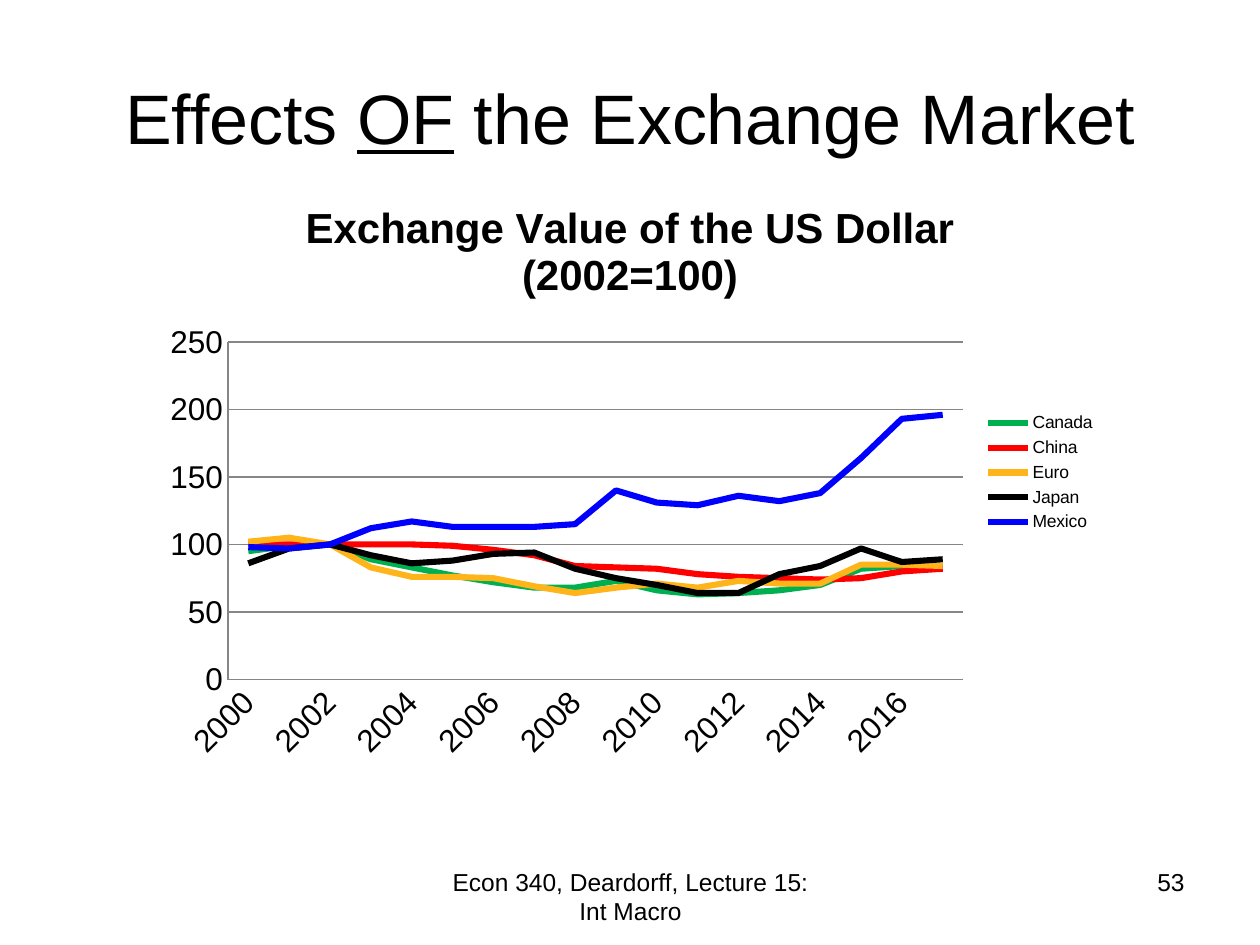
from pptx import Presentation
from pptx.chart.data import CategoryChartData
from pptx.dml.color import RGBColor
from pptx.enum.chart import XL_CHART_TYPE, XL_LEGEND_POSITION, XL_MARKER_STYLE, XL_TICK_MARK
from pptx.enum.text import MSO_ANCHOR, PP_ALIGN
from pptx.util import Inches, Pt

LINE_CHART = XL_CHART_TYPE.LINE
LEGEND_RIGHT = XL_LEGEND_POSITION.RIGHT
NO_MARKER = XL_MARKER_STYLE.NONE
NO_TICK = XL_TICK_MARK.NONE
MIDDLE = MSO_ANCHOR.MIDDLE
CENTER, RIGHT = PP_ALIGN.CENTER, PP_ALIGN.RIGHT

FONT = "Arial"
COLORS = {
    "text": "000000",
    "grid": "868686",
    "Canada": "00B050",
    "China": "FF0000",
    "Euro": "FFB51A",
    "Japan": "000000",
    "Mexico": "0000FF",
}
INDEX_VALUES = {
    "Canada": [95, 99, 100, 89, 83, 77, 72, 68, 68, 73, 66, 63, 64, 66, 70, 82, 84, 83],
    "China": [100, 100, 100, 100, 100, 99, 96, 92, 84, 83, 82, 78, 76, 75, 74, 75, 80, 82],
    "Euro": [102, 105, 100, 83, 76, 76, 75, 69, 64, 68, 71, 68, 73, 71, 71, 85, 85, 84],
    "Japan": [86, 97, 100, 92, 86, 88, 93, 94, 82, 75, 70, 64, 64, 78, 84, 97, 87, 89],
    "Mexico": [98, 97, 100, 112, 117, 113, 113, 113, 115, 140, 131, 129, 136, 132, 138, 164, 193, 196],
}


def style_font(font, size, bold=False):
    font.name = FONT
    font.size = Pt(size)
    font.bold = bold
    font.color.rgb = RGBColor.from_string(COLORS["text"])


deck = Presentation()
deck.slide_width, deck.slide_height = Inches(10), Inches(7.5)
width, height = deck.slide_width, deck.slide_height
page = deck.slides.add_slide(deck.slide_layouts[5])

title = page.shapes.title
title.left, title.top = int(width * 0.05), int(height * 0.04)
title.width, title.height = int(width * 0.9), Inches(1.25)
title.text_frame.vertical_anchor = MIDDLE
para = title.text_frame.paragraphs[0]
para.alignment = CENTER
for text in ("Effects ", "OF", " the Exchange Market"):
    span = para.add_run()
    span.text = text
    style_font(span.font, 40)
    span.font.underline = text == "OF"

data = CategoryChartData()
data.categories = [str(year) for year in range(2000, 2018)]
for name, values in INDEX_VALUES.items():
    data.add_series(name, values)
chart = page.shapes.add_chart(
    LINE_CHART, int(width * 0.12), Inches(1.38), int(width * 0.76), Inches(4.74), data
).chart
style_font(chart.font, 10)

chart.has_title = True
chart.chart_title.text_frame.text = "Exchange Value of the US Dollar (2002=100)"
style_font(chart.chart_title.text_frame.paragraphs[0].runs[0].font, 24, True)
chart.chart_title.include_in_layout = False

chart.has_legend = True
chart.legend.position = LEGEND_RIGHT
chart.legend.include_in_layout = False
style_font(chart.legend.font, 10)

for series in chart.plots[0].series:
    series.smooth = False
    series.marker.style = NO_MARKER
    series.format.line.width = Pt(3.5)
    series.format.line.color.rgb = RGBColor.from_string(COLORS[series.name])

years, scale = chart.category_axis, chart.value_axis
scale.minimum_scale, scale.maximum_scale, scale.major_unit = 0, 250, 50
scale.has_major_gridlines = True
for axis in (years, scale):
    axis.major_tick_mark = axis.minor_tick_mark = NO_TICK
    style_font(axis.tick_labels.font, 18)
for line in (years.format.line, scale.format.line, scale.major_gridlines.format.line):
    line.width = Pt(0.75)
    line.color.rgb = RGBColor.from_string(COLORS["grid"])

for text, left, box_width, alignment in (
    ("Econ 340, Deardorff, Lecture 15: Int Macro", 3.42, 3.17, CENTER),
    ("53", 7.17, 2.33, RIGHT),
):
    box = page.shapes.add_textbox(Inches(left), Inches(6.83), Inches(box_width), Inches(0.52))
    box.text_frame.word_wrap = True
    box.text_frame.text = text
    para = box.text_frame.paragraphs[0]
    para.alignment = alignment
    style_font(para.runs[0].font, 14)

deck.save("out.pptx")
